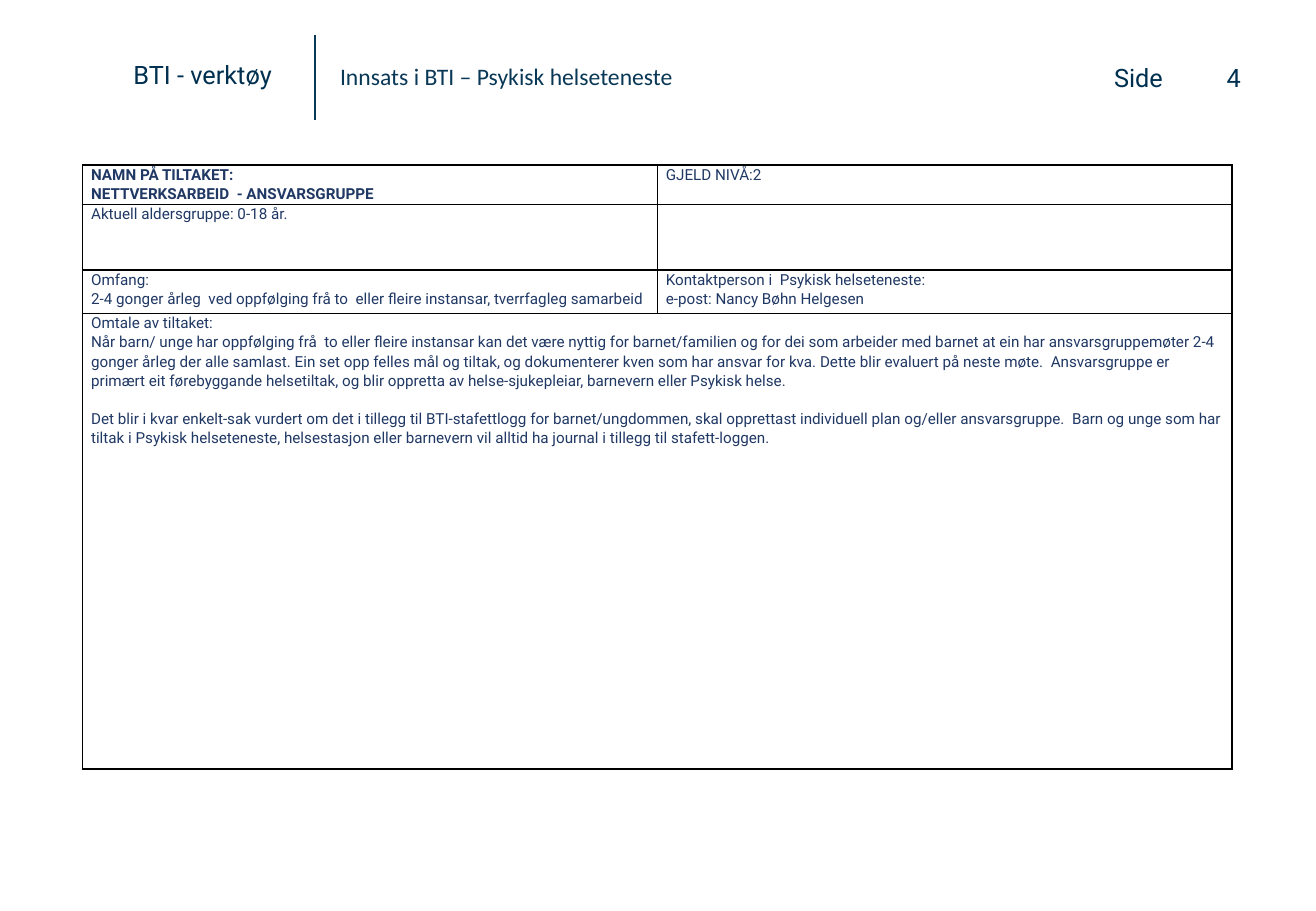
from lxml import etree
from pptx import Presentation
from pptx.dml.color import RGBColor
from pptx.enum.shapes import MSO_CONNECTOR
from pptx.enum.text import MSO_ANCHOR, PP_ALIGN
from pptx.oxml.ns import qn
from pptx.util import Inches, Pt

STRAIGHT = MSO_CONNECTOR.STRAIGHT
TOP, MIDDLE = MSO_ANCHOR.TOP, MSO_ANCHOR.MIDDLE
LEFT, RIGHT = PP_ALIGN.LEFT, PP_ALIGN.RIGHT

NAVY, TEAL, BLUE, BLACK = "003050", "093857", "203864", "000000"

HEADERS = [
    ("BTI - verktøy", (1, 0.44, 2.21, 0.35), "Roboto", 15, NAVY, TOP, LEFT, 1),
    ("Side", (9.07, 0.46, 1.23, 0.35), "Roboto", 15, NAVY, TOP, LEFT, 1),
    ("Innsats i BTI – Psykisk helseteneste", (2.7, 0.29, 4.29, 0.7),
     "Calibri", 14, TEAL, MIDDLE, LEFT, 0.9),
    ("4", (8.62, 0.35, 1.69, 0.58), "Roboto", 15, NAVY, MIDDLE, RIGHT, 1),
]
DIVIDER = (2.59, 0.29, 2.59, 0.99)

TABLE_LEFT, TABLE_TOP, COL_WIDTH = 0.68, 1.36, 4.73
ROW_HEIGHTS = [0.31, 0.54, 0.36, 3.75]
ROWS = [
    (["NAMN PÅ TILTAKET:", "NETTVERKSARBEID  - ANSVARSGRUPPE"], ["GJELD NIVÅ:2"]),
    (["Aktuell aldersgruppe: 0-18 år."], []),
    (["Omfang:",
      "2-4 gonger årleg  ved oppfølging frå to  eller fleire instansar, tverrfagleg samarbeid"],
     ["Kontaktperson i  Psykisk helseteneste:", "e-post: Nancy Bøhn Helgesen"]),
    (["Omtale av tiltaket:",
      "Når barn/ unge har oppfølging frå  to eller fleire instansar kan det være nyttig for "
      "barnet/familien og for dei som arbeider med barnet at ein har ansvarsgruppemøter 2-4 "
      "gonger årleg der alle samlast. Ein set opp felles mål og tiltak, og dokumenterer kven "
      "som har ansvar for kva. Dette blir evaluert på neste møte.  Ansvarsgruppe er primært "
      "eit førebyggande helsetiltak, og blir oppretta av helse-sjukepleiar, barnevern eller "
      "Psykisk helse.",
      "Det blir i kvar enkelt-sak vurdert om det i tillegg til BTI-stafettlogg for "
      "barnet/ungdommen, skal opprettast individuell plan og/eller ansvarsgruppe.  Barn og "
      "unge som har tiltak i Psykisk helseteneste, helsestasjon eller barnevern vil alltid "
      "ha journal i tillegg til stafett-loggen."], []),
]
SECTION_GAP = 11.3


def rgb(color):
    return RGBColor.from_string(color)


def style(p, font, size, color, spacing, bold=False):
    p.line_spacing = spacing
    p.font.name, p.font.size, p.font.bold = font, Pt(size), bold
    p.font.color.rgb = rgb(color)
    for r in p.runs:
        r.font.name, r.font.size, r.font.bold = font, Pt(size), bold
        r.font.color.rgb = rgb(color)


def add_header(s, text, box, font, size, color, anchor, align, spacing):
    tf = s.shapes.add_textbox(*map(Inches, box)).text_frame
    tf.word_wrap = True
    tf.vertical_anchor = anchor
    tf.text = text
    p = tf.paragraphs[0]
    p.alignment = align
    style(p, font, size, color, spacing)


def add_borders(cell):
    tcPr = cell._tc.get_or_add_tcPr()
    for side in ("a:lnL", "a:lnR", "a:lnT", "a:lnB"):
        ln = etree.SubElement(tcPr, qn(side), w=str(Pt(1)))
        fill = etree.SubElement(ln, qn("a:solidFill"))
        etree.SubElement(fill, qn("a:srgbClr"), val=BLACK)


def fill_cell(cell, lines, bold):
    add_borders(cell)
    cell.fill.background()
    cell.margin_left = cell.margin_right = Inches(0.07)
    cell.margin_top = cell.margin_bottom = 0
    tf = cell.text_frame
    tf.text = "\n".join(lines)
    for p in tf.paragraphs:
        style(p, "Roboto", 9, BLUE, 1.07, bold)


prs = Presentation()
prs.slide_width, prs.slide_height = Inches(10.83), Inches(7.5)
s = prs.slides.add_slide(prs.slide_layouts[6])

for header in HEADERS:
    add_header(s, *header)

divider = s.shapes.add_connector(STRAIGHT, *map(Inches, DIVIDER))
divider.line.color.rgb = rgb(TEAL)
divider.line.width = Pt(1)
etree.SubElement(divider._element.spPr, qn("a:effectLst"))

table = s.shapes.add_table(
    len(ROWS), 2, Inches(TABLE_LEFT), Inches(TABLE_TOP),
    Inches(2 * COL_WIDTH), Inches(sum(ROW_HEIGHTS))).table
table.first_row = table.horz_banding = False
for col in table.columns:
    col.width = Inches(COL_WIDTH)
for i, (height, cells) in enumerate(zip(ROW_HEIGHTS, ROWS)):
    table.rows[i].height = Inches(height)
    for j, lines in enumerate(cells):
        fill_cell(table.cell(i, j), lines, i == j == 0)

description = table.cell(3, 0)
description.merge(table.cell(3, 1))
description.text_frame.paragraphs[-1].space_before = Pt(SECTION_GAP)

prs.save("out.pptx")
